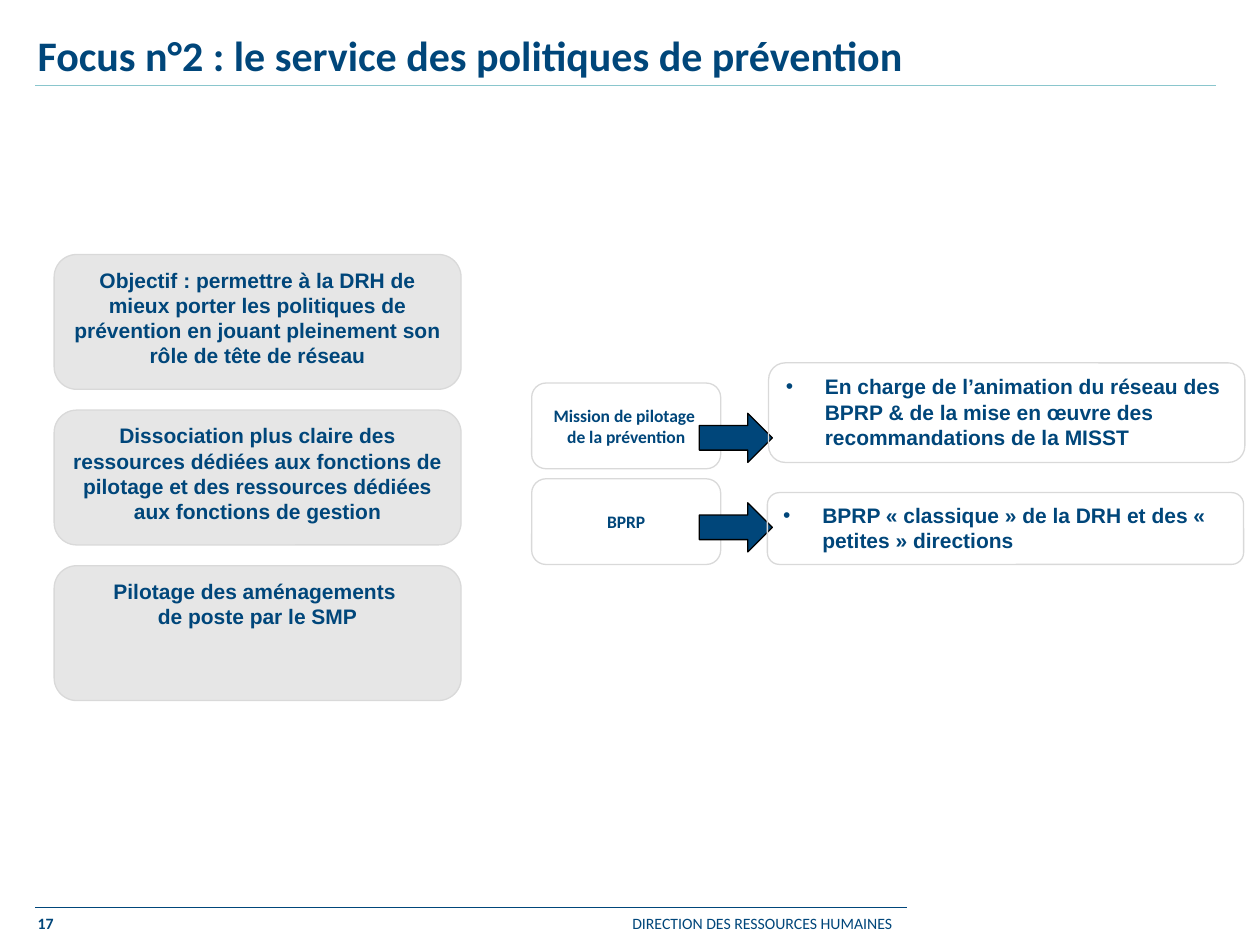
from dataclasses import dataclass

from lxml import etree
from pptx import Presentation
from pptx import util as u
from pptx.dml.color import RGBColor
from pptx.enum import shapes, text
from pptx.oxml.ns import qn

HUES = {"navy": "00467A", "teal": "8AC6CD", "edge": "D9D9D9",
        "grey": "E6E6E6", "black": "000000"}
KIND = shapes.MSO_SHAPE
MID, TOP = text.MSO_ANCHOR.MIDDLE, text.MSO_ANCHOR.TOP
LEFT, MIDST = text.PP_ALIGN.LEFT, text.PP_ALIGN.CENTER


@dataclass
class Style:
    font: str
    size: float
    bold: bool = True
    align: int = LEFT
    anchor: int = TOP
    inset: tuple = (0.1, 0.05)
    bullet: bool = False


@dataclass
class Box:
    x: float
    y: float
    w: float
    h: float
    words: str = ""
    fill: str = ""
    edge: str = "edge"
    kind: int = KIND.ROUNDED_RECTANGLE


def hue(name: str) -> RGBColor:
    return RGBColor.from_string(HUES[name])


def place(box: Box) -> tuple:
    return tuple(u.Inches(v) for v in (box.x, box.y, box.w, box.h))


def write(frame, words: str, style: Style) -> None:
    across, down = (u.Inches(v) for v in style.inset)
    form = {"word_wrap": True, "vertical_anchor": style.anchor,
            "margin_left": across, "margin_right": across,
            "margin_top": down, "margin_bottom": down}
    for key, val in form.items():
        setattr(frame, key, val)
    para = frame.paragraphs[0]
    para.text = words
    para.alignment = style.align
    if style.bullet:
        props = para._p.get_or_add_pPr()
        props.set("marL", str(u.Inches(0.31)))
        props.set("indent", str(-u.Inches(0.31)))
        etree.SubElement(props, qn("a:buFont"), typeface="Arial")
        etree.SubElement(props, qn("a:buChar"), char="•")
    for run in para.runs:
        for key, val in {"name": style.font, "size": u.Pt(style.size),
                         "bold": style.bold}.items():
            setattr(run.font, key, val)
        run.font.color.rgb = hue("navy")


def label(slide, box: Box, style: Style) -> None:
    write(slide.shapes.add_textbox(*place(box)).text_frame, box.words, style)


def draw(slide, box: Box, style: Style | None = None) -> None:
    shape = slide.shapes.add_shape(box.kind, *place(box))
    shape.shadow.inherit = False
    if box.fill:
        shape.fill.solid()
        shape.fill.fore_color.rgb = hue(box.fill)
    else:
        shape.fill.background()
    shape.line.color.rgb = hue(box.edge)
    shape.line.width = u.Pt(0.75)
    if style:
        write(shape.text_frame, box.words, style)


def rule(slide, end: float, y: float, tint: str) -> None:
    line = slide.shapes.add_connector(
        shapes.MSO_CONNECTOR.STRAIGHT,
        *(u.Inches(v) for v in (0.28, y, end, y)))
    line.line.color.rgb = hue(tint)
    line.line.width = u.Pt(0.75)
    etree.SubElement(line._element.spPr, qn("a:effectLst"))


def main() -> None:
    deck = Presentation()
    deck.slide_width, deck.slide_height = u.Inches(10), u.Inches(7.5)
    slide = deck.slides.add_slide(deck.slide_layouts[6])

    # Title and footer
    rule(slide, 9.65, 0.68, "teal")
    rule(slide, 7.2, 7.2, "navy")
    label(slide, Box(4.92, 7.2, 2.76, 0.25, "DIRECTION DES RESSOURCES HUMAINES"),
          Style("Calibri", 9, bold=False))
    label(slide, Box(0.2, 7.2, 0.98, 0.24, "17"), Style("Calibri", 9))
    label(slide, Box(0.2, 0.29, 9.45, 0.28,
                     "Focus n°2 : le service des politiques de prévention"),
          Style("Calibri", 24, anchor=MID))

    # Units of the service
    unit = Style("Calibri", 10, align=MIDST, anchor=MID, inset=(0.04, 0.04))
    for y, words in ((3.8, "BPRP"),
                     (3.04, "Mission de pilotage \vde la prévention")):
        draw(slide, Box(4.22, y, 1.5, 0.68, words), unit)

    # Arrows from units to their roles
    for y in (3.99, 3.28):
        draw(slide, Box(5.55, y, 0.58, 0.39, fill="navy", edge="black",
                        kind=KIND.RIGHT_ARROW))

    # Roles
    role = Style("Arial", 12, bullet=True)
    for x, y, h, words in (
            (6.1, 2.88, 0.79, "En charge de l’animation du réseau des BPRP & de "
                              "la mise en œuvre des recommandations de la MISST"),
            (6.09, 3.91, 0.57, "BPRP « classique » de la DRH et des "
                               "« petites » directions")):
        draw(slide, Box(x, y, 3.78, h, words), role)

    # Aims, evenly stacked on the left
    aim = Style("Arial", 12, align=MIDST)
    aims = (
        "Objectif : permettre à la DRH de mieux porter les politiques de "
        "prévention en jouant pleinement son rôle de tête de réseau",
        "Dissociation plus claire des ressources dédiées aux fonctions de "
        "pilotage et des ressources dédiées aux fonctions de gestion",
        "Pilotage des aménagements \vde poste par le SMP")
    for i, words in enumerate(aims):
        draw(slide, Box(0.43, 2.02 + 1.235 * i, 3.23, 1.07, words, "grey"), aim)

    deck.save("out.pptx")


if __name__ == "__main__":
    main()
